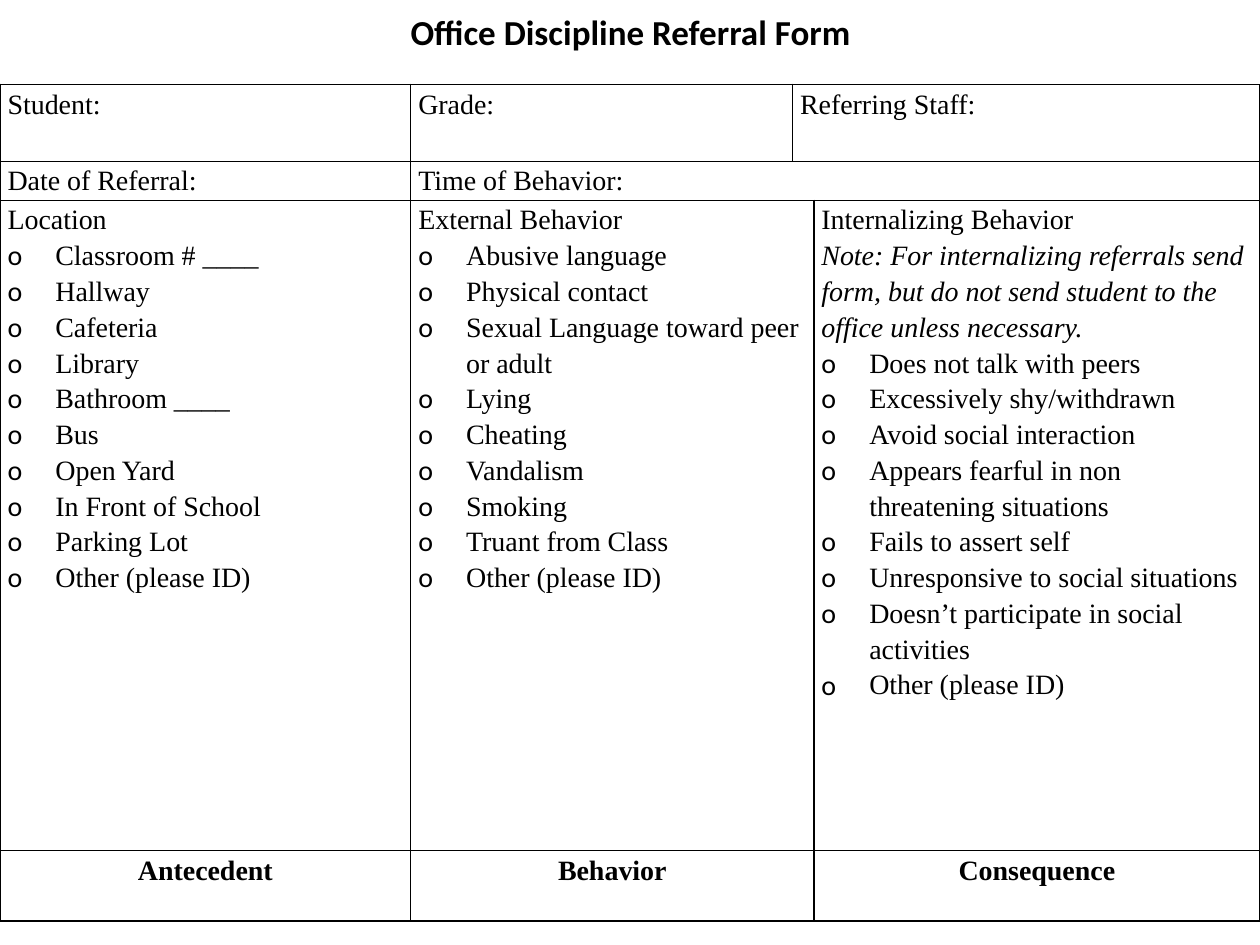
from lxml import etree
from pptx import Presentation
from pptx.dml.color import RGBColor
from pptx.enum import text
from pptx.oxml.ns import qn
from pptx.util import Inches, Pt

INK = "000000"
TABLE_FONT = {"name": "Times New Roman", "size": Pt(16), "bold": False, "italic": False}


def style(font, color=INK, **values):
    for name, value in values.items():
        setattr(font, name, value)
    font.color.rgb = RGBColor.from_string(color)


def add_bullet(p):
    pPr = p._p.get_or_add_pPr()
    pPr.set("marL", str(Inches(0.38)))
    pPr.set("indent", str(-Inches(0.38)))
    etree.SubElement(pPr, qn("a:buFont"), typeface="Calibri")
    etree.SubElement(pPr, qn("a:buChar"), char="o")


prs = Presentation()
prs.slide_width, prs.slide_height = Inches(10), Inches(7.5)
s = prs.slides.add_slide(prs.slide_layouts[5])

# Title
title = s.shapes.title
box = {"left": 2.85, "top": 0.03, "width": 4.31, "height": 0.44}
for name, value in box.items():
    setattr(title, name, Inches(value))
tf = title.text_frame
tf.word_wrap = False
tf.auto_size = text.MSO_AUTO_SIZE.SHAPE_TO_FIT_TEXT
tf.vertical_anchor = text.MSO_ANCHOR.MIDDLE
p = tf.paragraphs[0]
p.alignment = text.PP_ALIGN.CENTER
r = p.add_run()
r.text = "Office Discipline Referral Form"
style(r.font, name="Calibri", size=Pt(20), bold=True)

# Form table
col_widths = [3.26, 3.03, 0.17, 3.54]
row_heights = [0.61, 0.31, 5.16, 0.56]
table = s.shapes.add_table(len(row_heights), len(col_widths), Inches(0), Inches(0.67),
                           Inches(sum(col_widths)), Inches(sum(row_heights))).table
table.first_row = table.horz_banding = False
for col, width in zip(table.columns, col_widths):
    col.width = Inches(width)
for row, height in zip(table.rows, row_heights):
    row.height = Inches(height)
for row, first, last in [(0, 2, 3), (1, 1, 3), (2, 1, 2), (3, 1, 2)]:
    table.cell(row, first).merge(table.cell(row, last))

for cell in table.iter_cells():
    tcPr = cell._tc.get_or_add_tcPr()
    for side in ("lnL", "lnR", "lnT", "lnB"):
        ln = etree.SubElement(tcPr, qn(f"a:{side}"), w=str(Pt(1)))
        fill = etree.SubElement(ln, qn("a:solidFill"))
        etree.SubElement(fill, qn("a:srgbClr"), val=INK)
    cell.fill.background()
    cell.margin_left = cell.margin_right = Inches(0.06)
    cell.margin_top = cell.margin_bottom = 0

# Each cell: a heading followed by its checklist
contents = {
    (0, 0): ["Student:"],
    (0, 1): ["Grade:"],
    (0, 2): ["Referring Staff:"],
    (1, 0): ["Date of Referral:"],
    (1, 1): ["Time of Behavior:"],
    (2, 0): ["Location", "Classroom # ____", "Hallway", "Cafeteria", "Library",
             "Bathroom ____", "Bus", "Open Yard", "In Front of School", "Parking Lot",
             "Other (please ID)"],
    (2, 1): ["External Behavior", "Abusive language", "Physical contact",
             "Sexual Language toward peer or adult", "Lying", "Cheating", "Vandalism",
             "Smoking", "Truant from Class", "Other (please ID)"],
    (2, 3): ["Internalizing Behavior", "Does not talk with peers",
             "Excessively shy/withdrawn", "Avoid social interaction",
             "Appears fearful in non threatening situations", "Fails to assert self",
             "Unresponsive to social situations",
             "Doesn’t participate in social activities", "Other (please ID)"],
    (3, 0): ["Antecedent"],
    (3, 1): ["Behavior"],
    (3, 3): ["Consequence"],
}
for (row, col), lines in contents.items():
    tf = table.cell(row, col).text_frame
    is_footer = row == 3
    for i, line in enumerate(lines):
        p = tf.add_paragraph() if i else tf.paragraphs[0]
        p.line_spacing = 1.15
        p.alignment = text.PP_ALIGN.CENTER if is_footer else text.PP_ALIGN.LEFT
        if i:
            add_bullet(p)
        r = p.add_run()
        r.text = line
        style(r.font, **{**TABLE_FONT, "bold": is_footer})

note = table.cell(2, 3).text_frame.paragraphs[0]
note.add_line_break()
r = note.add_run()
r.text = ("Note: For internalizing referrals send form, but do not send student "
          "to the office unless necessary.")
style(r.font, **{**TABLE_FONT, "italic": True})

prs.save("out.pptx")
